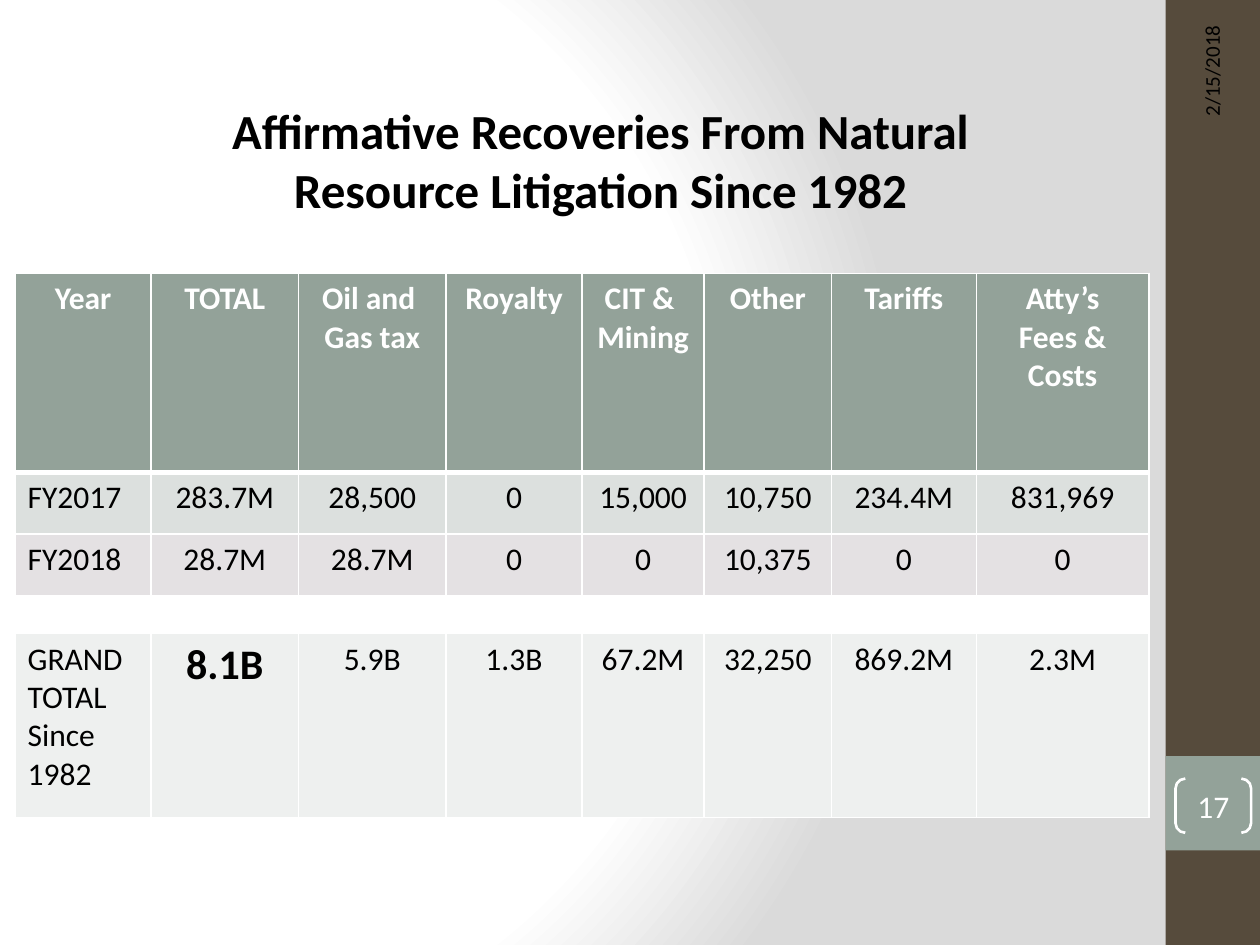
from pptx import Presentation
from pptx.dml.color import RGBColor
from pptx.enum.shapes import MSO_SHAPE as Shape
from pptx.enum.text import MSO_ANCHOR as Anchor, PP_ALIGN as Align
from pptx.oxml import parse_xml
from pptx.oxml.ns import nsdecls, qn
from pptx.util import Inches, Pt

BLACK = RGBColor(0x00, 0x00, 0x00)
WHITE = RGBColor(0xFF, 0xFF, 0xFF)
BROWN = RGBColor(0x56, 0x4B, 0x3C)
SAGE = RGBColor(0x93, 0xA2, 0x99)
ROW_FILLS = [
    SAGE,
    RGBColor(0xDC, 0xE0, 0xDE),
    RGBColor(0xE4, 0xE1, 0xE3),
    WHITE,
    RGBColor(0xEE, 0xF0, 0xEF),
]
COLUMN_WIDTHS = [1.08, 1.17, 1.17, 1.08, 0.97, 1.01, 1.15, 1.37]
ROW_HEIGHTS = [1.58, 0.49, 0.49, 0.3, 1.46]
ROWS = [
    ["Year", "TOTAL", "Oil and \nGas tax", "Royalty", "CIT & \nMining",
     "Other", "Tariffs", "Atty’s\nFees &\nCosts"],
    ["FY2017", "283.7M", "28,500", "0", "15,000", "10,750", "234.4M", "831,969"],
    ["FY2018", "28.7M", "28.7M", "0", "0", "10,375", "0", "0"],
    [""] * 8,
    ["GRAND\nTOTAL\nSince 1982", "8.1B", "5.9B", "1.3B", "67.2M", "32,250",
     "869.2M", "2.3M"],
]


def write_text(frame, text, size, color, align, bold=False):
    frame.word_wrap = True
    frame.text = text
    for paragraph in frame.paragraphs:
        paragraph.alignment = align
        font = paragraph.font
        font.name, font.size, font.bold = "Calibri", Pt(size), bold
        font.color.rgb = color


def set_border(cell, side, width):
    """Draw one white edge; side is L, R, T or B, given in that order."""
    cell_properties = cell._tc.get_or_add_tcPr()
    line = parse_xml(
        f'<a:ln{side} {nsdecls("a")} w="{Pt(width)}"><a:solidFill>'
        f'<a:srgbClr val="{WHITE}"/></a:solidFill></a:ln{side}>'
    )
    cell_properties.append(line)


presentation = Presentation()
presentation.slide_width = Inches(10)
presentation.slide_height = Inches(7.5)
slide = presentation.slides.add_slide(presentation.slide_layouts[6])

# Background: circular gradient from white to light grey
slide.background.fill.solid()
solid_fill = slide.element.find(".//" + qn("a:solidFill"))
gradient = parse_xml(
    f'<a:gradFill {nsdecls("a")} rotWithShape="1"><a:gsLst>'
    '<a:gs pos="0"><a:srgbClr val="FFFFFF"/></a:gs>'
    '<a:gs pos="75000"><a:srgbClr val="FFFFFF"/></a:gs>'
    '<a:gs pos="100000"><a:srgbClr val="DADADA"/></a:gs></a:gsLst>'
    '<a:path path="circle">'
    '<a:fillToRect l="20000" t="50000" r="100000" b="50000"/>'
    '</a:path></a:gradFill>'
)
solid_fill.getparent().replace(solid_fill, gradient)

# Side band with the page number
for top, height, color in [(0, 7.5, BROWN), (6, 0.75, SAGE)]:
    band = slide.shapes.add_shape(
        Shape.RECTANGLE, Inches(9.25), Inches(top), Inches(0.75), Inches(height))
    band.shadow.inherit = False
    band.fill.solid()
    band.fill.fore_color.rgb = color
    band.line.fill.background()

page_number = slide.shapes.add_shape(
    Shape.DOUBLE_BRACKET, Inches(9.33), Inches(6.18), Inches(0.6), Inches(0.43))
page_number.adjustments[0] = 0.18
page_number.shadow.inherit = False
page_number.fill.background()
page_number.line.color.rgb = WHITE
page_number.line.width = Pt(1.5)
frame = page_number.text_frame
frame.margin_left = frame.margin_right = frame.margin_top = frame.margin_bottom = 0
frame.vertical_anchor = Anchor.MIDDLE
write_text(frame, "17", 18, WHITE, Align.CENTER)

# Recoveries table
table = slide.shapes.add_table(
    len(ROWS), len(COLUMN_WIDTHS),
    Inches(0.12), Inches(2.17), Inches(9), Inches(4.33)).table
for column, width in zip(table.columns, COLUMN_WIDTHS):
    column.width = Inches(width)
for row, height in zip(table.rows, ROW_HEIGHTS):
    row.height = Inches(height)

for r, texts in enumerate(ROWS):
    header = r == 0
    for c, text in enumerate(texts):
        cell = table.cell(r, c)
        grand_total = text == "8.1B"
        write_text(
            cell.text_frame, text,
            24 if grand_total else 18 if text else 12,
            WHITE if header else BLACK,
            Align.CENTER if header or c else Align.LEFT,
            bold=header or grand_total)
        if not text:
            cell.margin_top = cell.margin_bottom = 0
        for side in "LRTB":
            thick = (header and side == "B") or (r == 1 and side == "T")
            set_border(cell, side, 3 if thick else 1)
        cell.fill.solid()
        cell.fill.fore_color.rgb = ROW_FILLS[r]

# Title and date
title = slide.shapes.add_textbox(
    Inches(1.14), Inches(0.75), Inches(7.25), Inches(1.04))
write_text(
    title.text_frame,
    "Affirmative Recoveries From Natural Resource Litigation Since 1982",
    28, BLACK, Align.CENTER, bold=True)

date = slide.shapes.add_textbox(
    Inches(8.28), Inches(1.24), Inches(2.67), Inches(0.4))
date.rotation = 270
date.text_frame.vertical_anchor = Anchor.MIDDLE
write_text(date.text_frame, "2/15/2018", 12, BLACK, Align.RIGHT)

presentation.save("out.pptx")
